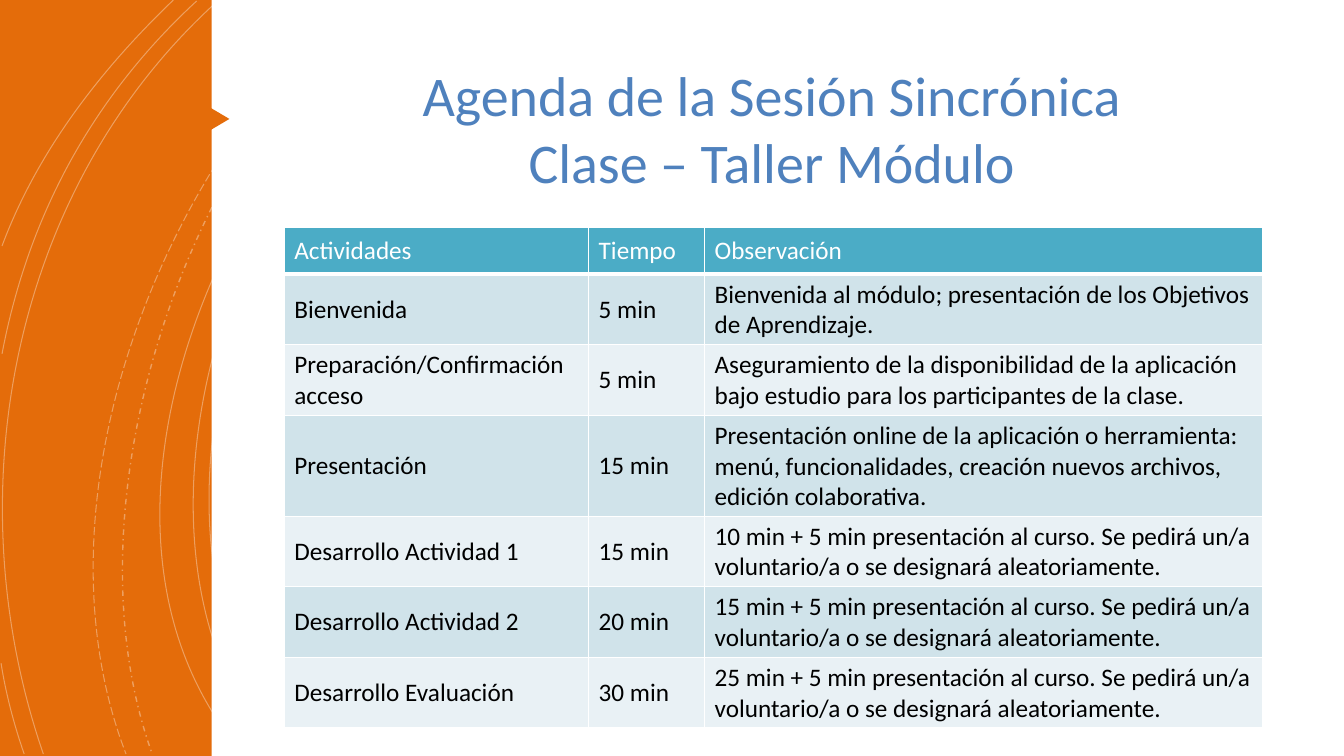
from dataclasses import dataclass

from lxml.etree import SubElement
from pptx import Presentation
from pptx.dml.color import RGBColor
from pptx.enum.dml import MSO_LINE
from pptx.enum.shapes import MSO_SHAPE
from pptx.enum.text import MSO_ANCHOR, PP_ALIGN
from pptx.oxml.ns import qn
from pptx.util import Inches, Pt

WIDTH, HEIGHT = Inches(13.33), Inches(7.5)


@dataclass(frozen=True)
class Theme:
    font: str = "Calibri"
    title_size: int = 40
    table_size: int = 18
    title: str = "4F81BD"
    orange: str = "E46C0A"
    white: str = "FFFFFF"
    black: str = "000000"
    header: str = "4BACC6"
    bands: tuple = ("D0E3EA", "E9F1F5")
    arc_opacity: int = 35


THEME = Theme()

# Arcs: line width, dash, then four Bézier points in percent of the slide
SOLID, DASH_DOT, LONG_DASH = MSO_LINE.SOLID, MSO_LINE.DASH_DOT, MSO_LINE.LONG_DASH
ARCS = [
    (0.75, SOLID, [(34.8, 0), (18.3, 17.73), (8.25, 72.13), (22.05, 99.73)]),
    (0.75, SOLID, [(33.83, 0), (17.33, 18.4), (7.28, 71.07), (20.4, 99.73)]),
    (0.75, SOLID, [(32.03, 0), (16.28, 19.6), (3.98, 70.53), (18.08, 99.73)]),
    (1, DASH_DOT, [(27.23, 0), (13.2, 22.13), (4.88, 67.87), (11.33, 99.73)]),
    (0.75, LONG_DASH, [(26.33, 0), (11.78, 22.53), (2.18, 66.53), (9.38, 99.73)]),
    (0.75, SOLID, [(16.28, 0), (0.83, 24.67), (-3.45, 65.33), (3.23, 99.73)]),
    (0.75, SOLID, [(14.63, 0.13), (6.9, 12.8), (2.1, 28.53), (0.15, 46.8)]),
    (0.75, SOLID, [(0.08, 87.73), (0.45, 91.87), (1.05, 95.87), (1.8, 99.73)]),
    (0.75, SOLID, [(12.9, 0), (7.5, 9.2), (2.78, 20), (0.15, 32.53)]),
]

TITLE = "Agenda de la Sesión Sincrónica\nClase – Taller Módulo"
VOLUNTEER = " min + 5 min presentación al curso. Se pedirá un/a voluntario/a o se designará aleatoriamente."
AGENDA = [
    ("Actividades", "Tiempo", "Observación"),
    ("Bienvenida", "5 min", "Bienvenida al módulo; presentación de los Objetivos de Aprendizaje."),
    ("Preparación/Confirmación acceso", "5 min",
     "Aseguramiento de la disponibilidad de la aplicación bajo estudio para los participantes de la clase."),
    ("Presentación", "15 min",
     "Presentación online de la aplicación o herramienta: menú, funcionalidades, "
     "creación nuevos archivos, edición colaborativa."),
    ("Desarrollo Actividad 1", "15 min", "10" + VOLUNTEER),
    ("Desarrollo Actividad 2", "20 min", "15" + VOLUNTEER),
    ("Desarrollo Evaluación", "30 min", "25" + VOLUNTEER),
]
COLUMN_SHARES = (22.65, 8.63, 41.55)
HEADER_SHARE, ROW_SHARE = 6.13, 5.47


def across(percent):
    return round(WIDTH * percent / 100)


def down(percent):
    return round(HEIGHT * percent / 100)


def box(left, top, width, height):
    return across(left), down(top), across(width), down(height)


def set_all(target, values):
    for name, value in values.items():
        setattr(target, name, value)


def write(paragraph, text, size, color):
    paragraph.text = text
    for run in paragraph.runs:
        set_all(run.font, {"name": THEME.font, "size": Pt(size), "bold": False})
        run.font.color.rgb = RGBColor.from_string(color)


def add_block(slide, kind, area, color, rotation=0):
    shape = slide.shapes.add_shape(kind, *box(*area))
    shape.fill.solid()
    shape.fill.fore_color.rgb = RGBColor.from_string(color)
    shape.line.fill.background()
    shape.shadow.inherit = False
    shape.rotation = rotation


def add_arc(slide, width, dash, points):
    start, *others = [(across(x), down(y)) for x, y in points]
    builder = slide.shapes.build_freeform(*start)
    builder.add_line_segments(others, close=False)
    shape = builder.convert_to_shape()
    shape.fill.background()
    shape.shadow.inherit = False
    set_all(shape.line, {"width": Pt(width), "dash_style": dash})
    shape.line.color.rgb = RGBColor.from_string(THEME.white)
    # Translucent line
    color = next(shape.line._ln.iter(qn("a:srgbClr")))
    SubElement(color, qn("a:alpha"), val=str(THEME.arc_opacity * 1000))
    # Turn the three segments into one cubic curve
    outline = next(shape._element.iter(qn("a:path")))
    curve = SubElement(outline, qn("a:cubicBezTo"))
    for segment in outline.findall(qn("a:lnTo")):
        curve.append(segment[0])
        outline.remove(segment)


def add_title(slide, text, area):
    frame = slide.shapes.add_textbox(*box(*area)).text_frame
    set_all(frame, {"word_wrap": True, "vertical_anchor": MSO_ANCHOR.TOP, "margin_top": Inches(0.07)})
    paragraph = frame.paragraphs[0]
    paragraph.alignment = PP_ALIGN.CENTER
    write(paragraph, text, THEME.title_size, THEME.title)


def add_borders(cell, bottom):
    properties = cell._tc.get_or_add_tcPr()
    for side, width in {"L": 1, "R": 1, "T": 1, "B": bottom}.items():
        line = SubElement(properties, qn(f"a:ln{side}"), w=str(Pt(width)))
        fill = SubElement(line, qn("a:solidFill"))
        SubElement(fill, qn("a:srgbClr"), val=THEME.white)


def add_agenda(slide, rows, area):
    frame = slide.shapes.add_table(len(rows), len(COLUMN_SHARES), *box(*area))
    table = frame.table
    for column, share in zip(table.columns, COLUMN_SHARES):
        column.width = across(share)
    for index, texts in enumerate(rows):
        is_header = index == 0
        table.rows[index].height = down(HEADER_SHARE if is_header else ROW_SHARE)
        background = THEME.header if is_header else THEME.bands[(index - 1) % 2]
        for cell, text in zip(table.rows[index].cells, texts):
            add_borders(cell, bottom=3 if is_header else 1)
            cell.vertical_anchor = MSO_ANCHOR.MIDDLE
            cell.fill.solid()
            cell.fill.fore_color.rgb = RGBColor.from_string(background)
            write(cell.text_frame.paragraphs[0], text, THEME.table_size,
                  THEME.white if is_header else THEME.black)
    frame.height = down(area[3])


def main():
    presentation = Presentation()
    set_all(presentation, {"slide_width": WIDTH, "slide_height": HEIGHT})
    slide = presentation.slides.add_slide(presentation.slide_layouts[6])

    # Orange band with arcs, partly covered by the white panel
    add_block(slide, MSO_SHAPE.RECTANGLE, (0, 0, 100, 100), THEME.orange)
    for arc in ARCS:
        add_arc(slide, *arc)
    add_block(slide, MSO_SHAPE.RECTANGLE, (15.75, 0, 84.25, 100), THEME.white)

    # Title with its pointer
    add_title(slide, TITLE, (20.48, 7.07, 73.88, 16.53))
    add_block(slide, MSO_SHAPE.ISOSCELES_TRIANGLE, (14.78, 13.87, 2.48, 3.73), THEME.orange, rotation=90)

    # Agenda table
    add_agenda(slide, AGENDA, (21.15, 30.13, sum(COLUMN_SHARES), 66.13))

    presentation.save("out.pptx")


if __name__ == "__main__":
    main()
